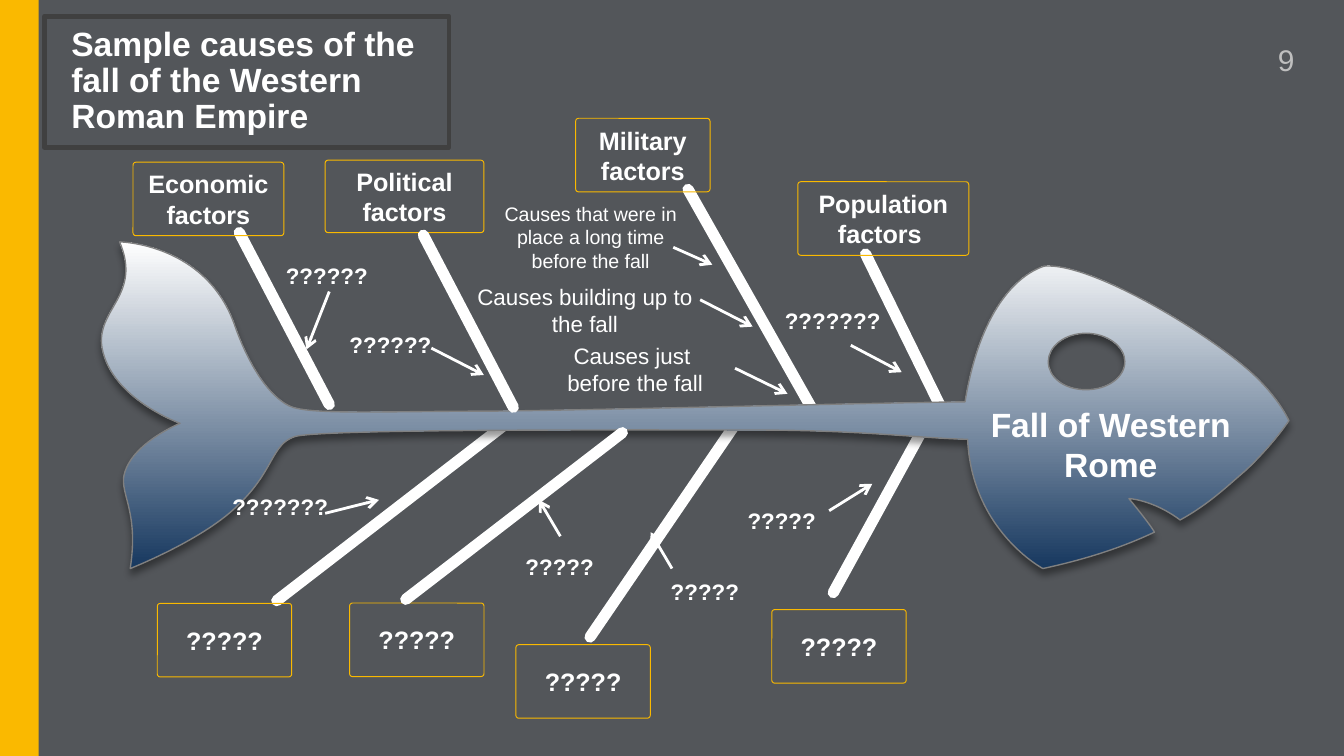
from typing import NamedTuple

from lxml import etree
from pptx import Presentation
from pptx.dml.color import RGBColor
from pptx.enum import shapes, text
from pptx.oxml import ns
from pptx.util import Pt

COLORS = {
    "background": "53565A", "accent": "FAB900", "white": "FFFFFF", "navy": "17385F",
    "frame": "404040", "outline": "808080", "number": "BFBFBF", "shadow": "000000",
}
FONT = "Arial"


class Line(NamedTuple):
    x1: float
    y1: float
    x2: float
    y2: float


class Label(NamedTuple):
    words: str
    x: float
    y: float
    w: float
    h: float = 14.4
    size: float = 12
    bold: bool = True
    inset: tuple = (0, 0)


class Factor(NamedTuple):
    words: str
    x: float
    y: float
    w: float = 72
    h: float = 39.4


class Curve(NamedTuple):
    """A cubic curve that goes on from the end of the one before."""
    control1: tuple
    control2: tuple
    end: tuple


BACK_RIBS = [
    Line(463.7, 136.1, 508.3, 226.8), Line(368.6, 101.5, 437, 222.5),
    Line(128.2, 124.6, 176.4, 216.7), Line(446.4, 317.5, 496.1, 226.8),
    Line(316.1, 341.3, 396.7, 223.2), Line(148.3, 321.8, 271.4, 226.8),
]
FRONT_RIBS = [Line(226.8, 126, 275, 218.2), Line(217.4, 321.1, 333.4, 231.8)]
ARROWS = [
    Line(393.8, 197.3, 421.9, 211), Line(455.8, 185, 483.1, 199.4),
    Line(231.1, 186.5, 259.2, 200.9), Line(360, 304.6, 348.5, 285.1),
    Line(444.2, 273.6, 467.3, 259.2), Line(174.2, 275, 203, 267.8),
    Line(176.4, 156.2, 164.2, 187.2), Line(300.2, 287.3, 288.7, 267.8),
    Line(375.1, 160.6, 403.2, 175), Line(360.7, 132.5, 381.6, 141.8),
]
FACTORS = [
    Factor("Economic factors", 71.3, 86.9, 80.8),
    Factor("Political factors", 174.2, 85.8, 85, 38.8),
    Factor("Military factors", 308.4, 63.4),
    Factor("Population factors ", 427.4, 97.4, 91.6),
    Factor("?????", 84.3, 323.3), Factor("?????", 187.3, 323.1),
    Factor("?????", 276.4, 345.4), Factor("?????", 413.5, 326.6),
]
LABELS = [
    Label("Causes that were in place a long time before the fall",
          261.4, 108, 110.2, 38.2, size=10.5, bold=False),
    Label("Causes building up to the fall", 254.7, 151.9, 117.4, 28.8, bold=False),
    Label("Causes just  before the fall", 293.1, 183.3, 94.3, 28.8, bold=False),
    Label("???????", 413, 164.5, 66.2), Label("??????", 182.2, 177.5, 54),
    Label("??????", 148.1, 140.4, 54), Label("???????", 123.1, 264.2, 54),
    Label("?????", 342, 309.6, 71.3), Label("?????", 385.7, 271.7, 66.2),
    Label("?????", 264.2, 296.6, 71.3),
    Label("Fall of Western Rome", 520.6, 212.7, 149, 51.1, size=18, inset=(7.2, 3.6)),
]

EYE_START = (581.8, 178.6)
EYE = [
    Curve((570.2, 178.6), (561.6, 185.8), (561.6, 193.7)),
    Curve((561.6, 202.3), (570.2, 208.8), (581.8, 208.8)),
    Curve((593.3, 208.8), (602.6, 202.3), (602.6, 193.7)),
    Curve((602.6, 185.8), (593.3, 178.6), EYE_START),
]
BODY_START = (64.1, 129.6)
BODY = [
    Curve(BODY_START, (110.9, 130.3), (126, 175)),
    Curve((133.9, 197.3), (144.7, 212.4), (154.8, 217.4)),
    Curve((164.9, 222.5), (203.8, 220.3), (264.2, 220.3)),
    Curve((324.7, 219.6), (459.4, 216), (517, 215.3)),
    Curve((524.9, 167), (544.3, 147.6), (559.4, 142.6)),
    Curve((585.4, 140.4), (652.3, 181.4), (673.9, 203)),
    Curve((686.2, 215.3), (690.5, 225.4), (690.5, 225.4)),
    Curve((690.5, 225.4), (682.6, 237.6), (667.4, 252)),
    Curve((658.1, 259.9), (648, 270), (632.2, 278.6)),
    Curve((617.8, 267.8), (604.8, 267.1), (604.8, 267.1)),
    Curve((604.8, 267.1), (615.6, 280.1), (618.5, 285.1)),
    Curve((601.9, 293), (582.5, 299.5), (558.7, 304.6)),
    Curve((558.7, 304.6), (520.6, 284.4), (518.4, 235.4)),
    Curve((491, 234.7), (462.2, 230.4), (402.5, 230.4)),
    Curve((342, 230.4), (169.2, 229.7), (157.7, 234)),
    Curve((145.4, 238.3), (146.9, 252), (128.2, 270)),
    Curve((110.2, 288.7), (69.8, 304.6), (69.8, 304.6)),
    Curve((74.2, 275.8), (65.5, 266.4), (66.2, 256.3)),
    Curve((68.4, 238.3), (96.5, 226.8), (96.5, 226.8)),
    Curve((96.5, 226.8), (59.8, 213.8), (54.7, 186.5)),
    Curve((51.1, 165.6), (76.3, 158.4), BODY_START),
]


def rgb(name: str) -> RGBColor:
    return RGBColor.from_string(COLORS[name])


def add_xml(parent, tag: str, **attrs):
    return etree.SubElement(parent, ns.qn(tag), {k: str(v) for k, v in attrs.items()})


def write(sp, words: str, *, size: float, color: str = "white", bold: bool = False,
          align=text.PP_ALIGN.CENTER, anchor=text.MSO_ANCHOR.TOP,
          inset: tuple = (7.2, 3.6), spacing: float = 1.0) -> None:
    tf = sp.text_frame
    tf.word_wrap = True
    tf.auto_size = text.MSO_AUTO_SIZE.NONE
    tf.vertical_anchor = anchor
    tf.margin_left = tf.margin_right = Pt(inset[0])
    tf.margin_top = tf.margin_bottom = Pt(inset[1])
    p = tf.paragraphs[0]
    p.alignment = align
    p.line_spacing = spacing
    r = p.add_run()
    r.text = words
    r.font.name, r.font.size, r.font.bold = FONT, Pt(size), bold
    r.font.color.rgb = rgb(color)


def add_line(slide, line: Line, width: float, arrow: bool = False) -> None:
    """Draw a round-capped rib, or a thin line with an arrowhead."""
    cxn = slide.shapes.add_connector(shapes.MSO_CONNECTOR.STRAIGHT, *map(Pt, line))
    cxn.line.width = Pt(width)
    cxn.line.color.rgb = rgb("white")
    ln = cxn.line._get_or_add_ln()
    if arrow:
        add_xml(ln, "a:tailEnd", type="arrow")
    else:
        ln.set("cap", "rnd")
    add_xml(cxn._element.spPr, "a:effectLst")


def add_label(slide, label: Label) -> None:
    sp = slide.shapes.add_textbox(Pt(label.x), Pt(label.y), Pt(label.w), Pt(label.h))
    write(sp, label.words, size=label.size, bold=label.bold, inset=label.inset)


def add_factor(slide, factor: Factor) -> None:
    sp = slide.shapes.add_shape(shapes.MSO_SHAPE.ROUNDED_RECTANGLE, Pt(factor.x),
                                Pt(factor.y), Pt(factor.w), Pt(factor.h))
    sp.adjustments[0] = 0.04
    sp.shadow.inherit = False
    sp.fill.background()
    sp.line.color.rgb = rgb("accent")
    sp.line.width = Pt(0.5)
    write(sp, factor.words, size=13.5, bold=True, anchor=text.MSO_ANCHOR.MIDDLE)


def bend_segments(sp, curves: list) -> None:
    """Turn the straight segments of a freeform into the given curves, in order."""
    segments = list(sp._element.iter(ns.qn("a:lnTo")))
    for segment, curve in zip(segments, curves):
        bezier = etree.Element(ns.qn("a:cubicBezTo"))
        for x, y in curve:
            add_xml(bezier, "a:pt", x=Pt(x) - sp.left, y=Pt(y) - sp.top)
        segment.getparent().replace(segment, bezier)


def add_fish(slide) -> None:
    builder = slide.shapes.build_freeform(*map(Pt, EYE_START), scale=1.0)
    builder.add_line_segments([tuple(map(Pt, c.end)) for c in EYE], close=True)
    builder.move_to(*map(Pt, BODY_START))
    builder.add_line_segments([tuple(map(Pt, c.end)) for c in BODY], close=True)
    sp = builder.convert_to_shape()
    bend_segments(sp, EYE + BODY)
    sp.fill.gradient()
    sp.fill.gradient_angle = 90
    for stop, color in zip(sp.fill.gradient_stops, ("navy", "white")):
        stop.color.rgb = rgb(color)
    sp.line.color.rgb = rgb("outline")
    sp.line.width = Pt(0)
    effects = add_xml(sp._element.spPr, "a:effectLst")
    shadow = add_xml(effects, "a:outerShdw", blurRad=Pt(4), dist=Pt(3), dir=5400000, rotWithShape=0)
    add_xml(add_xml(shadow, "a:srgbClr", val=COLORS["shadow"]), "a:alpha", val=40000)


def add_bar(slide) -> None:
    bar = slide.shapes.add_shape(shapes.MSO_SHAPE.RECTANGLE, Pt(-0.7), 0, Pt(21.4), Pt(406))
    bar.shadow.inherit = False
    bar.fill.solid()
    bar.fill.fore_color.rgb = rgb("accent")
    bar.line.fill.background()


def add_title(slide) -> None:
    sp = slide.shapes.title
    sp.left, sp.top, sp.width, sp.height = Pt(23.8), Pt(8.7), Pt(216.7), Pt(70.2)
    sp.line.color.rgb = rgb("frame")
    sp.line.width = Pt(2.5)
    write(sp, "Sample causes of the fall of the Western Roman Empire", size=18, bold=True,
          align=text.PP_ALIGN.LEFT, anchor=text.MSO_ANCHOR.MIDDLE,
          inset=(14.4, 14.4), spacing=0.9)


def main() -> None:
    prs = Presentation()
    prs.slide_width, prs.slide_height = Pt(720), Pt(405)
    slide = prs.slides.add_slide(prs.slide_layouts[5])
    slide.background.fill.solid()
    slide.background.fill.fore_color.rgb = rgb("background")
    add_bar(slide)
    add_title(slide)
    for rib in BACK_RIBS:
        add_line(slide, rib, 6)
    add_fish(slide)
    for factor in FACTORS:
        add_factor(slide, factor)
    for rib in FRONT_RIBS:
        add_line(slide, rib, 6)
    for label in LABELS:
        add_label(slide, label)
    for arrow in ARROWS:
        add_line(slide, arrow, 1.5, arrow=True)
    number = slide.shapes.add_textbox(Pt(677.5), Pt(19), Pt(22.3), Pt(26.6))
    write(number, "9", size=16, color="number", align=text.PP_ALIGN.LEFT)
    prs.save("out.pptx")


if __name__ == "__main__":
    main()
